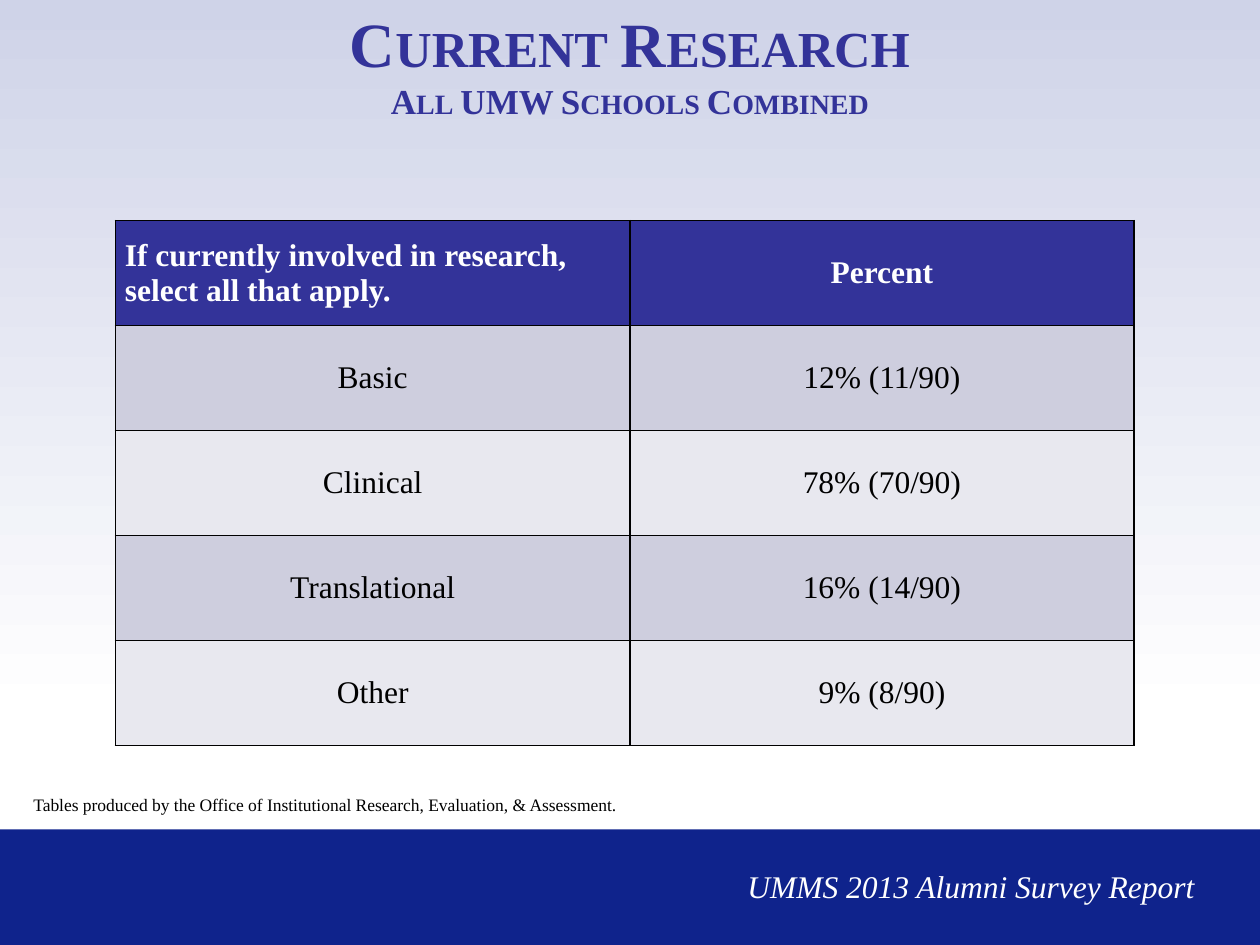
from dataclasses import dataclass

from lxml.etree import SubElement
from pptx import Presentation
from pptx.dml.color import RGBColor
from pptx.enum.shapes import MSO_SHAPE
from pptx.enum.text import MSO_ANCHOR, PP_ALIGN
from pptx.oxml.ns import qn
from pptx.util import Pt

FONT = "Times New Roman"
COLORS = {
    "sky": "CFD3E8", "white": "FFFFFF", "footer": "0F238C", "indigo": "333399",
    "black": "000000", "band_dark": "CECEDE", "band_light": "E8E8EF",
}


@dataclass
class Style:
    size: float
    color: str
    bold: bool = False
    italic: bool = False
    small_caps: bool = False


@dataclass
class Box:
    left: float
    top: float
    width: float
    height: float

    def lengths(self) -> list:
        return [Pt(v) for v in (self.left, self.top, self.width, self.height)]


@dataclass
class Note:
    box: Box
    text: str
    style: Style


ROWS = [
    ("If currently involved in research, select all that apply.", "Percent"),
    ("Basic", "12% (11/90)"),
    ("Clinical", "78% (70/90)"),
    ("Translational", "16% (14/90)"),
    ("Other", "9% (8/90)"),
]
COLUMN_WIDTHS = (294, 288)
ROW_HEIGHT = 60
NOTES = [
    Note(Box(12, 450, 468, 19.5),
         "Tables produced by the Office of Institutional Research, Evaluation, & Assessment.",
         Style(10, "black")),
    Note(Box(420, 492, 282, 29), "UMMS 2013 Alumni Survey Report",
         Style(18, "white", italic=True)),
]


def rgb(name: str) -> RGBColor:
    return RGBColor.from_string(COLORS[name])


def add_run(p, text: str, style: Style) -> None:
    r = p.add_run()
    r.text = text
    r.font.name = FONT
    r.font.size = Pt(style.size)
    r.font.bold = style.bold
    r.font.italic = style.italic
    r.font.color.rgb = rgb(style.color)
    if style.small_caps:
        r._r.get_or_add_rPr().set("cap", "small")


def add_panel(s, box: Box):
    sp = s.shapes.add_shape(MSO_SHAPE.RECTANGLE, *box.lengths())
    sp.shadow.inherit = False
    sp.line.fill.background()
    return sp


def add_text_frame(s, box: Box):
    tf = s.shapes.add_textbox(*box.lengths()).text_frame
    tf.word_wrap = True
    return tf


def set_borders(cell) -> None:
    tcPr = cell._tc.get_or_add_tcPr()
    for i, side in enumerate(("lnL", "lnR", "lnT", "lnB")):
        ln = tcPr.makeelement(qn(f"a:{side}"), {"w": str(Pt(1))})
        fill = SubElement(ln, qn("a:solidFill"))
        SubElement(fill, qn("a:srgbClr"), val=COLORS["black"])
        tcPr.insert(i, ln)  # borders come before the cell fill


def fill_cell(cell, text: str, row: int, col: int) -> None:
    header = row == 0
    cell.fill.solid()
    band = "band_dark" if row % 2 else "band_light"
    cell.fill.fore_color.rgb = rgb("indigo" if header else band)
    cell.vertical_anchor = MSO_ANCHOR.MIDDLE
    cell.margin_left = cell.margin_right = Pt(5.4)
    cell.margin_top = cell.margin_bottom = Pt(0)
    p = cell.text_frame.paragraphs[0]
    p.alignment = PP_ALIGN.LEFT if header and col == 0 else PP_ALIGN.CENTER
    add_run(p, text, Style(18, "white" if header else "black", bold=header))
    set_borders(cell)


def add_research_table(s) -> None:
    box = Box(66, 126, sum(COLUMN_WIDTHS), ROW_HEIGHT * len(ROWS))
    table = s.shapes.add_table(len(ROWS), len(COLUMN_WIDTHS), *box.lengths()).table
    for column, width in zip(table.columns, COLUMN_WIDTHS):
        column.width = Pt(width)
    for i, texts in enumerate(ROWS):
        table.rows[i].height = Pt(ROW_HEIGHT)
        for j, text in enumerate(texts):
            fill_cell(table.cell(i, j), text, i, j)


def main() -> None:
    prs = Presentation()
    prs.slide_width, prs.slide_height = Pt(720), Pt(540)
    s = prs.slides.add_slide(prs.slide_layouts[6])

    # Background gradient, top to bottom
    sky = add_panel(s, Box(0, 0, 720, 408))
    sky.fill.gradient()
    sky.fill.gradient_angle = 270
    for stop, name, position in zip(sky.fill.gradient_stops, ("sky", "white"), (0, 1)):
        stop.color.rgb = rgb(name)
        stop.position = position

    # Footer band
    footer = add_panel(s, Box(0, 474, 720, 66))
    footer.fill.solid()
    footer.fill.fore_color.rgb = rgb("footer")

    # Title and subtitle
    tf = add_text_frame(s, Box(0, 0, 720, 72))
    tf.vertical_anchor = MSO_ANCHOR.MIDDLE
    p = tf.paragraphs[0]
    p.alignment = PP_ALIGN.CENTER
    add_run(p, "Current Research", Style(36, "indigo", bold=True, small_caps=True))
    p.add_line_break()
    add_run(p, "All UMW Schools Combined", Style(20, "indigo", bold=True, small_caps=True))

    add_research_table(s)

    # Source note and report name
    for note in NOTES:
        add_run(add_text_frame(s, note.box).paragraphs[0], note.text, note.style)

    prs.save("out.pptx")


if __name__ == "__main__":
    main()
